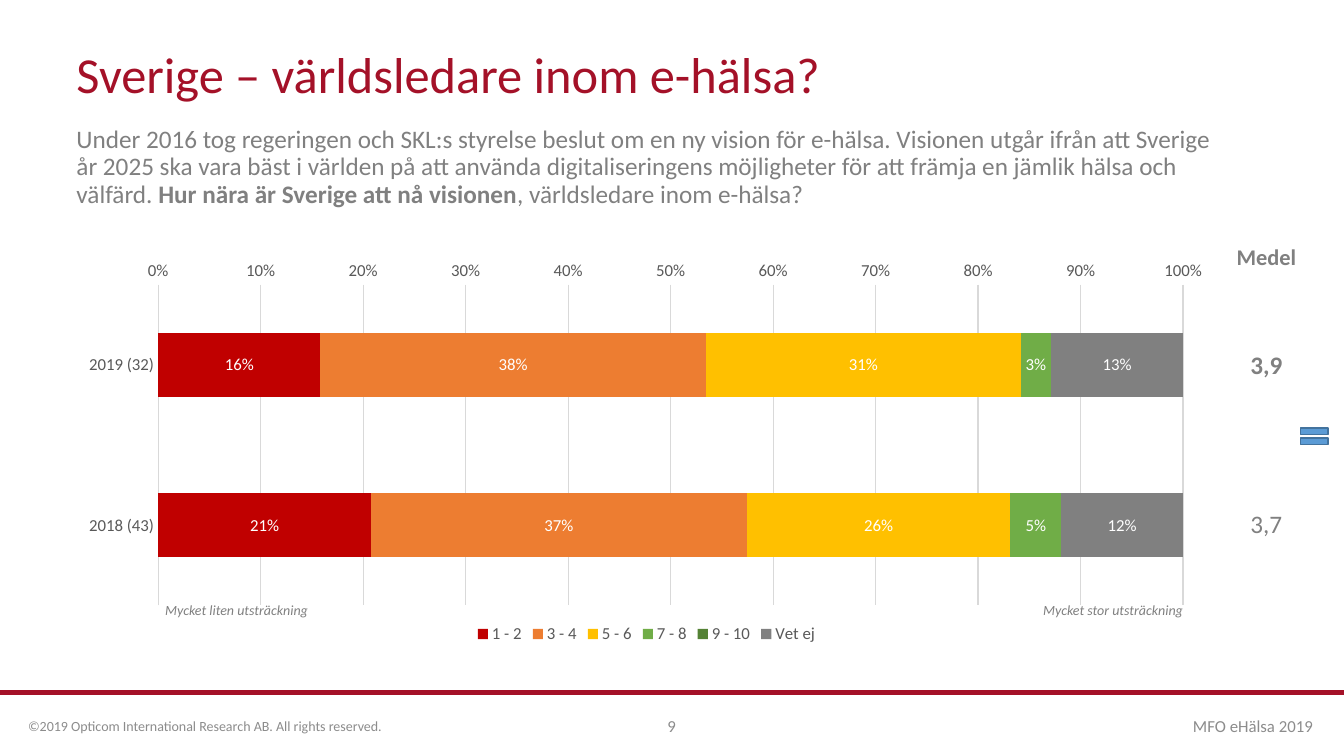
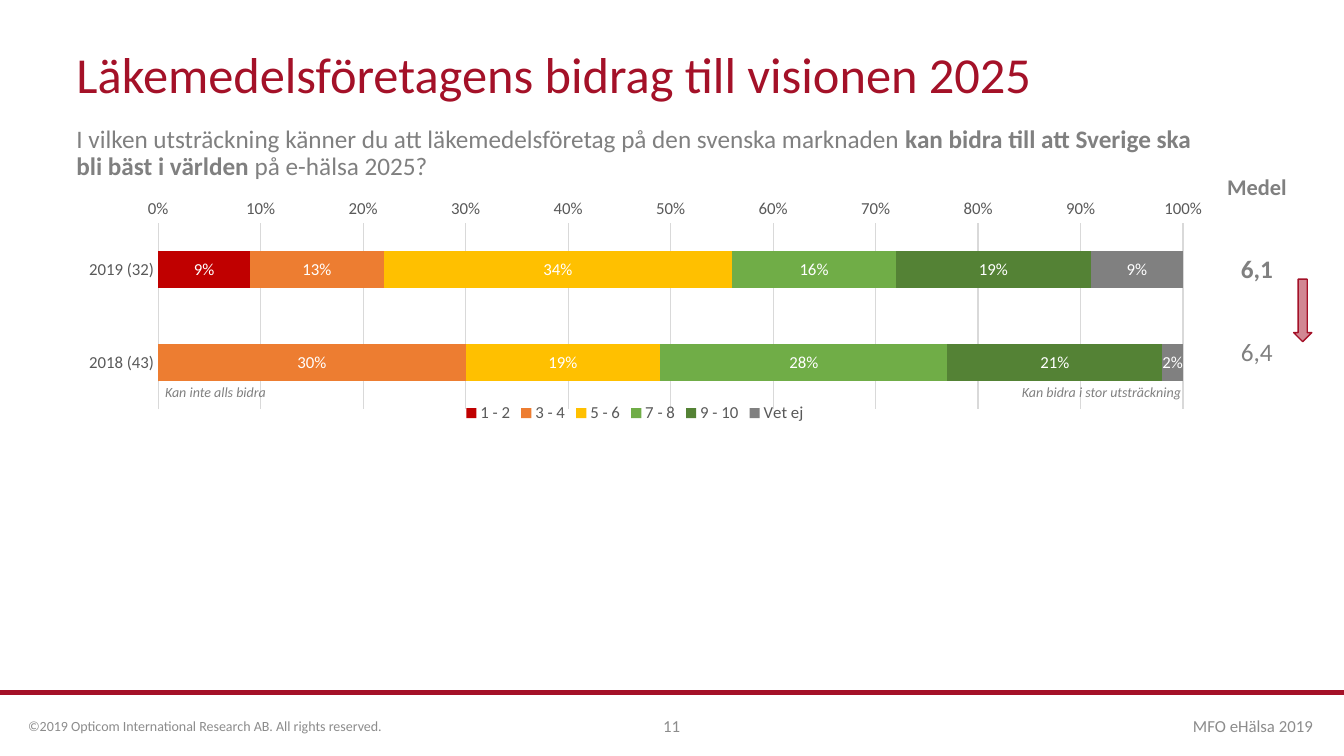
"""Build two survey slides with stacked bars, mean values and a shared frame."""
from lxml.etree import SubElement
from pptx import Presentation
from pptx.chart.data import CategoryChartData
from pptx.dml.color import RGBColor
from pptx.enum.chart import XL_CHART_TYPE, XL_LEGEND_POSITION, XL_TICK_MARK
from pptx.enum.shapes import MSO_CONNECTOR, MSO_SHAPE
from pptx.enum.text import MSO_ANCHOR, PP_ALIGN
from pptx.oxml import parse_xml
from pptx.oxml.ns import nsdecls, qn
from pptx.util import Inches, Pt

FONT = "Calibri"
COLORS = {
    "brand": "A41128", "text": "808080", "footer": "8C8C8C", "axis": "595959",
    "grid": "D9D9D9", "white": "FFFFFF", "equal": "5B9BD5", "equal_line": "43739E",
}
SERIES = {
    "1 - 2": "C00000", "3 - 4": "ED7D31", "5 - 6": "FFC000",
    "7 - 8": "70AD47", "9 - 10": "548235", "Vet ej": "808080",
}
CATEGORIES = ["2019 (32)", "2018 (43)"]
CONTENT_LEFT, CONTENT_WIDTH = 4.95, 86.27
FOOTER_TOP, FOOTER_HEIGHT = 93.33, 5.33
CAPTION_WIDTH, CAPTION_HEIGHT = 16.58, 3.6

SLIDES = [
    {
        "number": "9",
        "title": "Sverige – världsledare inom e-hälsa?",
        "question": [
            ("Under 2016 tog regeringen och SKL:s styrelse beslut om en ny vision för e-hälsa. "
             "Visionen utgår ifrån att Sverige år 2025 ska vara bäst i världen på att använda "
             "digitaliseringens möjligheter för att främja en jämlik hälsa och välfärd. ", False),
            ("Hur nära är Sverige att nå visionen", True),
            (", världsledare inom e-hälsa?", False),
        ],
        "values": [(0.16, 0.21), (0.38, 0.37), (0.31, 0.26), (0.03, 0.05), (0, 0), (0.13, 0.12)],
        "chart": (33.47, 52.4), "plot": (0.08, 0.81), "legend": (0.35, 0.93),
        "table": (90.62, 29.87, 7.2), "rows": (8.4, 20.13, 22),
        "means": ("Medel", "3,9", "3,7"),
        "captions": ("Mycket liten utsträckning", "Mycket stor utsträckning"),
        "caption_top": 78.93, "caption_right": 72.17,
        "symbol": (MSO_SHAPE.MATH_EQUAL, (96.4, 55.87, 2.78, 3.73), "equal", "equal_line", 100),
    },
    {
        "number": "11",
        "title": "Läkemedelsföretagens bidrag till visionen 2025",
        "question": [
            ("I vilken utsträckning känner du att läkemedelsföretag på den svenska marknaden ", False),
            ("kan bidra till att Sverige ska bli bäst i världen ", True),
            ("på e-hälsa 2025?", False),
        ],
        "values": [(0.09, 0), (0.13, 0.3), (0.34, 0.19), (0.16, 0.28), (0.19, 0.21), (0.09, 0.02)],
        "chart": (25.47, 33.73), "plot": (0.12, 0.73), "legend": (0.34, 0.81),
        "table": (90.4, 19.33, 6.23), "rows": (10.93, 10.93, 10.93),
        "means": ("Medel", "6,1", "6,4"),
        "captions": ("Kan inte alls bidra", "Kan bidra i stor utsträckning"),
        "caption_top": 50.13, "caption_right": 72.02,
        "symbol": (MSO_SHAPE.DOWN_ARROW, (96.25, 36.93, 1.35, 8.27), "brand", "brand", 50),
    },
]

presentation = Presentation()
presentation.slide_width, presentation.slide_height = Inches(13.33), Inches(7.5)


def place(left, top, width, height):
    """Turn percentages of the slide into left, top, width and height."""
    across, down = presentation.slide_width / 100, presentation.slide_height / 100
    return [round(left * across), round(top * down), round(width * across), round(height * down)]


def add_text(slide, box, pieces, size, color, alignment=PP_ALIGN.LEFT,
             anchor=MSO_ANCHOR.MIDDLE, spacing=1.0, italic=False):
    """Add a text box holding one paragraph made of (text, bold) pieces."""
    text_frame = slide.shapes.add_textbox(*place(*box)).text_frame
    text_frame.word_wrap = True
    text_frame.vertical_anchor = anchor
    paragraph = text_frame.paragraphs[0]
    paragraph.alignment = alignment
    paragraph.line_spacing = spacing
    for text, bold in pieces:
        run = paragraph.add_run()
        run.text = text
        run.font.name, run.font.size = FONT, Pt(size)
        run.font.bold, run.font.italic = bold, italic
        run.font.color.rgb = RGBColor.from_string(COLORS[color])


for content in SLIDES:
    slide = presentation.slides.add_slide(presentation.slide_layouts[6])

    left, top, width, height = place(0, 91.6, 100, 0)
    rule = slide.shapes.add_connector(MSO_CONNECTOR.STRAIGHT, left, top, left + width, top)
    rule.line.color.rgb = RGBColor.from_string(COLORS["brand"])
    rule.line.width = Pt(3)
    SubElement(rule._element.spPr, qn("a:effectLst"))

    add_text(slide, (CONTENT_LEFT, 5.33, CONTENT_WIDTH, 10.8), [(content["title"], False)],
             36, "brand", spacing=0.7)
    for text, left, width, size, alignment in [
        ("©2019 Opticom International Research AB. All rights reserved.", 1.35, 28.06, 10, PP_ALIGN.LEFT),
        ("MFO eHälsa 2019", 64.67, 33.76, 12, PP_ALIGN.RIGHT),
        (content["number"], 38.71, 22.51, 12, PP_ALIGN.CENTER),
    ]:
        add_text(slide, (left, FOOTER_TOP, width, FOOTER_HEIGHT), [(text, False)],
                 size, "footer", alignment)
    add_text(slide, (CONTENT_LEFT, 16.13, CONTENT_WIDTH, 6.13), content["question"],
             18, "text", anchor=MSO_ANCHOR.TOP, spacing=0.9)

    chart_data = CategoryChartData(number_format="0%")
    chart_data.categories = CATEGORIES
    for name, values in zip(SERIES, content["values"]):
        chart_data.add_series(name, values)
    chart_top, chart_height = content["chart"]
    chart = slide.shapes.add_chart(
        XL_CHART_TYPE.BAR_STACKED_100,
        *place(CONTENT_LEFT, chart_top, CONTENT_WIDTH, chart_height), chart_data).chart
    chart.has_title = False
    chart.font.name, chart.font.size = FONT, Pt(12)
    chart.font.color.rgb = RGBColor.from_string(COLORS["axis"])
    chart.has_legend = True
    chart.legend.position = XL_LEGEND_POSITION.BOTTOM
    chart.legend.include_in_layout = False

    category_axis, value_axis = chart.category_axis, chart.value_axis
    for axis in (category_axis, value_axis):
        axis.major_tick_mark = axis.minor_tick_mark = XL_TICK_MARK.NONE
    category_axis.reverse_order = True
    value_axis.has_major_gridlines = True
    value_axis.tick_labels.number_format = "0%"
    value_axis.tick_labels.number_format_is_linked = False
    for line in (category_axis.format.line, value_axis.major_gridlines.format.line):
        line.color.rgb = RGBColor.from_string(COLORS["grid"])
        line.width = Pt(0.75)
    value_axis.format.line.fill.background()

    plot = chart.plots[0]
    plot.gap_width, plot.overlap = 150, 100
    plot.vary_by_categories = False
    for series, color in zip(plot.series, SERIES.values()):
        series.format.fill.solid()
        series.format.fill.fore_color.rgb = RGBColor.from_string(color)
        labels = series.data_labels
        labels.show_value = True
        labels.number_format, labels.number_format_is_linked = "0%;;", False
        labels.font.name, labels.font.size = FONT, Pt(12)
        labels.font.color.rgb = RGBColor.from_string(COLORS["white"])

    plot_top, plot_height = content["plot"]
    legend_left, legend_top = content["legend"]
    plot_area = chart._chartSpace.chart.plotArea
    legend = chart.legend._element
    for old_layout in plot_area.findall(qn("c:layout")) + legend.findall(qn("c:layout")):
        old_layout.getparent().remove(old_layout)
    for parent, index, settings in [
        (plot_area, 0, [("layoutTarget", "inner"), ("xMode", "edge"), ("yMode", "edge"),
                        ("x", 0.079), ("y", plot_top), ("w", 0.884), ("h", plot_height)]),
        (legend, 1, [("xMode", "edge"), ("yMode", "edge"), ("x", legend_left), ("y", legend_top)]),
    ]:
        layout = parse_xml(f"<c:layout {nsdecls('c')}><c:manualLayout/></c:layout>")
        for tag, value in settings:
            SubElement(layout[0], qn(f"c:{tag}")).set("val", str(value))
        parent.insert(index, layout)

    left, top, width = content["table"]
    table = slide.shapes.add_table(
        len(content["rows"]), 1, *place(left, top, width, sum(content["rows"]))).table
    table.first_row = table.horz_banding = False
    for index, (text, row_height) in enumerate(zip(content["means"], content["rows"])):
        table.rows[index].height = place(0, 0, 0, row_height)[3]
        cell = table.cell(index, 0)
        cell.fill.background()
        cell.vertical_anchor = MSO_ANCHOR.MIDDLE
        cell.text_frame.text = text
        paragraph = cell.text_frame.paragraphs[0]
        paragraph.alignment = PP_ALIGN.CENTER
        font = paragraph.runs[0].font
        font.name, font.size = FONT, Pt(16 if index == 0 else 18)
        font.bold = index < 2
        font.color.rgb = RGBColor.from_string(COLORS["text"])

    for text, left, alignment in zip(content["captions"], (11.55, content["caption_right"]),
                                     (PP_ALIGN.LEFT, PP_ALIGN.RIGHT)):
        add_text(slide, (left, content["caption_top"], CAPTION_WIDTH, CAPTION_HEIGHT),
                 [(text, False)], 10, "text", alignment, MSO_ANCHOR.TOP, italic=True)

    kind, box, fill_color, line_color, opacity = content["symbol"]
    symbol = slide.shapes.add_shape(kind, *place(*box))
    symbol.shadow.inherit = False
    symbol.fill.solid()
    symbol.fill.fore_color.rgb = RGBColor.from_string(COLORS[fill_color])
    symbol.line.color.rgb = RGBColor.from_string(COLORS[line_color])
    symbol.line.width = Pt(1)
    if opacity < 100:
        color_element = symbol._element.spPr.find(qn("a:solidFill"))[0]
        SubElement(color_element, qn("a:alpha")).set("val", str(opacity * 1000))

presentation.save("out.pptx")
